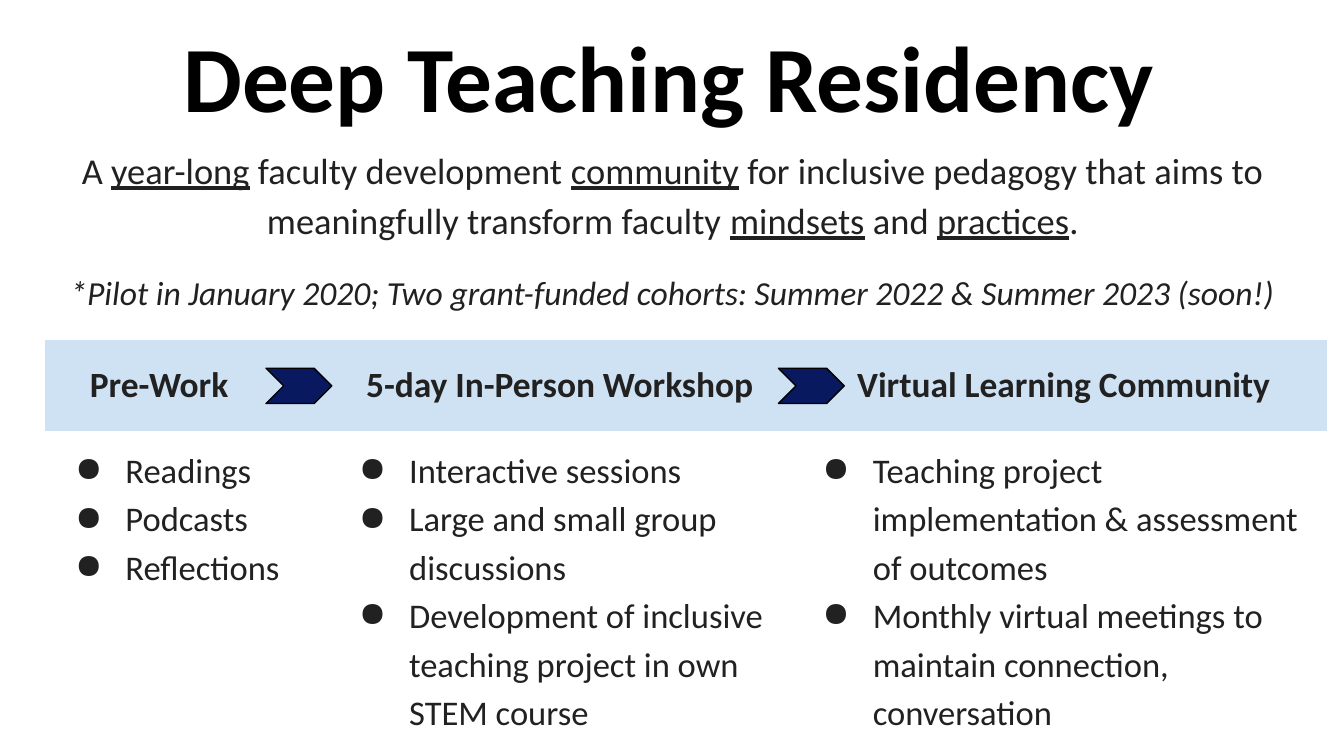
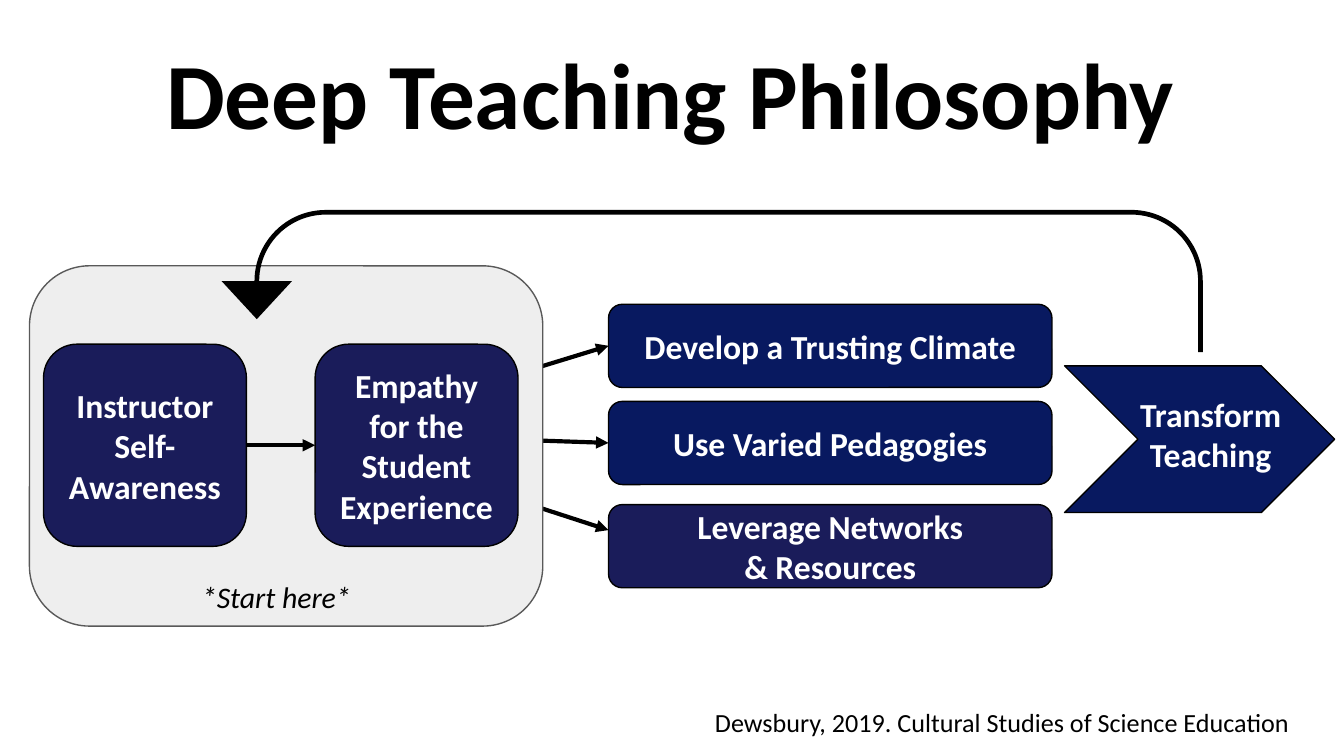
from collections import namedtuple
from lxml.etree import SubElement as Sub, Element as Elem
from pptx import Presentation
from pptx.dml.color import RGBColor
from pptx.enum.shapes import MSO_CONNECTOR as Conn, MSO_SHAPE as Form
from pptx.enum.text import MSO_ANCHOR as Anchor, PP_ALIGN as Align
from pptx.oxml.ns import qn
from pptx.util import Pt

BLACK = RGBColor(0, 0, 0)
WHITE = RGBColor(0xFF, 0xFF, 0xFF)
INK = RGBColor(0x21, 0x21, 0x21)
NAVY = RGBColor(0x08, 0x19, 0x60)
PLUM = RGBColor(0x1A, 0x1C, 0x5A)
PALE = RGBColor(0xCF, 0xE2, 0xF3)
MIST = RGBColor(0xEE, 0xEE, 0xEE)
GREY = RGBColor(0x59, 0x59, 0x59)
FONT = "Calibri"
PAD = 7.2

Box = namedtuple("Box", "x y w h")


def points(box):
    return [Pt(v) for v in box]


def inner(box, x, y, w, h):
    return Box(box.x + x, box.y + y, w, h)


def add_run(para, text, size, color, bold=False, italic=False, under=False):
    run = para.add_run()
    run.text = text
    font = run.font
    font.name, font.size = FONT, Pt(size)
    font.bold, font.italic, font.underline = bold, italic, under
    font.color.rgb = color


def add_lines(para, text, size, color, **style):
    for i, line in enumerate(text.split("\n")):
        if i:
            para.add_line_break()
        add_run(para, line, size, color, **style)


def set_frame(frame, anchor):
    frame.word_wrap = True
    frame.vertical_anchor = anchor
    frame.margin_left = frame.margin_right = Pt(PAD)
    frame.margin_top = frame.margin_bottom = Pt(PAD)


def next_para(frame, first, align=Align.CENTER):
    para = frame.paragraphs[0] if first else frame.add_paragraph()
    para.alignment = align
    return para


def add_text(slide, box, text, size, color=BLACK, **style):
    frame = slide.shapes.add_textbox(*points(box)).text_frame
    set_frame(frame, Anchor.TOP)
    add_lines(next_para(frame, True), text, size, color, **style)


def add_form(slide, form, box, fill, edge=BLACK, paras=(), adjust=()):
    shape = slide.shapes.add_shape(form, *points(box))
    shape.shadow.inherit = False
    shape.fill.solid()
    shape.fill.fore_color.rgb = fill
    if edge is None:
        shape.line.fill.background()
    else:
        shape.line.color.rgb = edge
        shape.line.width = Pt(0.75)
    for i, value in enumerate(adjust):
        shape.adjustments[i] = value
    set_frame(shape.text_frame, Anchor.MIDDLE)
    for i, text in enumerate(paras):
        para = next_para(shape.text_frame, i == 0)
        add_lines(para, text, 18, WHITE, bold=True)
    return shape


def add_arrow(slide, start, end, source=None, target=None):
    line = slide.shapes.add_connector(Conn.STRAIGHT, *points(start + end))
    line.line.color.rgb = BLACK
    line.line.width = Pt(2.25)
    if source is not None:
        line.begin_connect(source, 3)
    if target is not None:
        line.end_connect(target, 1)
    Sub(line.line._get_or_add_ln(), qn("a:tailEnd"), type="triangle")
    Sub(line._element.spPr, qn("a:effectLst"))


def add_title(slide, box, text):
    add_text(slide, box, text, 50, bold=True)


def add_intro(slide, box):
    frame = slide.shapes.add_textbox(*points(box)).text_frame
    set_frame(frame, Anchor.MIDDLE)
    aim = next_para(frame, True)
    aim.line_spacing = 1.15
    parts = ["A ", "year-long", " faculty development ", "community",
             " for inclusive pedagogy that aims to meaningfully transform faculty ",
             "mindsets", " and ", "practices", "."]
    for i, text in enumerate(parts):
        add_run(aim, text, 19.5, INK, under=i % 2 == 1)
    note = next_para(frame, False)
    note.line_spacing = 1.15
    note.space_before = Pt(12.6)
    add_run(note, "*Pilot in January 2020; Two grant-funded cohorts: "
            "Summer 2022 & Summer 2023 (soon!)", 18, INK, italic=True)


def add_bullet(para):
    props = para._p.get_or_add_pPr()
    props.set("marL", str(Pt(36)))
    props.set("indent", str(Pt(-27)))
    Sub(Sub(props, qn("a:buClr")), qn("a:srgbClr"), val=str(INK))
    Sub(props, qn("a:buChar"), char="●")


def style_cell(cell, fill, anchor):
    cell.margin_left = cell.margin_right = Pt(PAD)
    cell.margin_top = cell.margin_bottom = Pt(PAD)
    cell.vertical_anchor = anchor
    if fill is None:
        cell.fill.background()
    else:
        cell.fill.solid()
        cell.fill.fore_color.rgb = fill
    props = cell._tc.get_or_add_tcPr()
    for i, side in enumerate(("lnL", "lnR", "lnT", "lnB")):
        edge = Elem(qn("a:" + side), w="0")
        Sub(edge, qn("a:noFill"))
        props.insert(i, edge)


def add_phases(slide, box):
    phases = [
        ("Pre-Work", 152, 17, Align.LEFT, ["Readings", "Podcasts", "Reflections"]),
        ("5-day In-Person Workshop", 248.4, 13, Align.LEFT,
         ["Interactive sessions", "Large and small group discussions",
          "Development of inclusive teaching project in own\nSTEM course"]),
        ("Virtual Learning Community", 286.5, 4.3, Align.CENTER,
         ["Teaching project implementation & assessment of outcomes",
          "Monthly virtual meetings to maintain connection, conversation"]),
    ]
    table = slide.shapes.add_table(2, len(phases), *points(box)).table
    table.first_row = table.horz_banding = False
    table.rows[0].height = Pt(48.5)
    table.rows[1].height = Pt(box.h - 48.5)
    for col, (name, width, shift, align, items) in enumerate(phases):
        table.columns[col].width = Pt(width)
        head, body = table.cell(0, col), table.cell(1, col)
        style_cell(head, PALE, Anchor.MIDDLE)
        style_cell(body, None, Anchor.TOP)
        head.margin_left = Pt(PAD + shift)
        para = next_para(head.text_frame, True, align)
        add_run(para, name, 19, INK, bold=True)
        for i, item in enumerate(items):
            para = next_para(body.text_frame, i == 0, Align.LEFT)
            para.line_spacing = 1.15
            para.space_before = Pt(0 if i else 7)
            add_bullet(para)
            add_lines(para, item, 18.5, INK)
    for x in (118.5, 393):
        add_form(slide, Form.CHEVRON, inner(box, x, 15, 35.3, 18.9), NAVY)


def add_goals(slide, box):
    goals = [(0, "Develop a Trusting Climate", NAVY),
             (52, "Use Varied Pedagogies", NAVY),
             (107.3, "Leverage Networks\n& Resources", PLUM)]
    trust, vary, _ = [
        add_form(slide, Form.ROUNDED_RECTANGLE, inner(box, 0, y, box.w, 44.6),
                 fill, paras=[text]) for y, text, fill in goals]
    left = box.x - 80
    add_arrow(slide, (left, box.y + 46.8), (box.x, box.y + 22.3), target=trust)
    add_arrow(slide, (left, box.y + 95), (box.x, box.y + 121))
    add_arrow(slide, (box.x - 47.5, box.y + 72.7), (box.x, box.y + 74.3),
              target=vary)


def add_start(slide, box):
    add_form(slide, Form.ROUNDED_RECTANGLE, box, MIST, GREY)
    steps = [["Instructor\nSelf-", "Awareness"],
             ["Empathy for the Student Experience"]]
    first, last = [
        add_form(slide, Form.ROUNDED_RECTANGLE,
                 inner(box, 7.5 + i * 145.5, 42, 108.7, 108.3), PLUM, paras=paras)
        for i, paras in enumerate(steps)]
    mid = box.y + 96
    add_arrow(slide, (box.x + 116, mid), (box.x + 153, mid), first, last)


def add_result(slide, box):
    add_form(slide, Form.CHEVRON, box, NAVY)
    add_text(slide, inner(box, 31.5, 7.7, 93.6, 58.3), "Transform Teaching",
             18, WHITE, bold=True)
    loop = add_form(slide, Form.U_TURN_ARROW, inner(box, -451.5, -83.5, 525.6, 76.2),
                    BLACK, None, adjust=(0.033, 0.247, 0.267, 0.514, 0.768))
    loop._element.spPr.find(qn("a:xfrm")).set("flipH", "1")


def build_program(slide):
    add_title(slide, Box(-1.4, 3, 720, 75), "Deep Teaching Residency")
    add_intro(slide, Box(9.4, 67.5, 702, 108))
    add_phases(slide, Box(24, 182.3, 686.9, 214.5))


def build_model(slide):
    add_goals(slide, Box(326, 163, 237.6, 152))
    add_title(slide, Box(5.8, 12.3, 707, 75), "Deep Teaching Philosophy")
    add_text(slide, Box(360, 371, 354, 32),
             "Dewsbury, 2019. Cultural Studies of Science Education", 14)
    add_start(slide, Box(15.8, 142.4, 275, 193))
    add_result(slide, Box(570.3, 196, 144.7, 78.6))
    add_text(slide, Box(34.6, 303, 227, 34), "*Start here*", 16, italic=True)


def main():
    deck = Presentation()
    deck.slide_width, deck.slide_height = Pt(720), Pt(405)
    for build in (build_program, build_model):
        build(deck.slides.add_slide(deck.slide_layouts[6]))
    deck.save("out.pptx")


if __name__ == "__main__":
    main()
